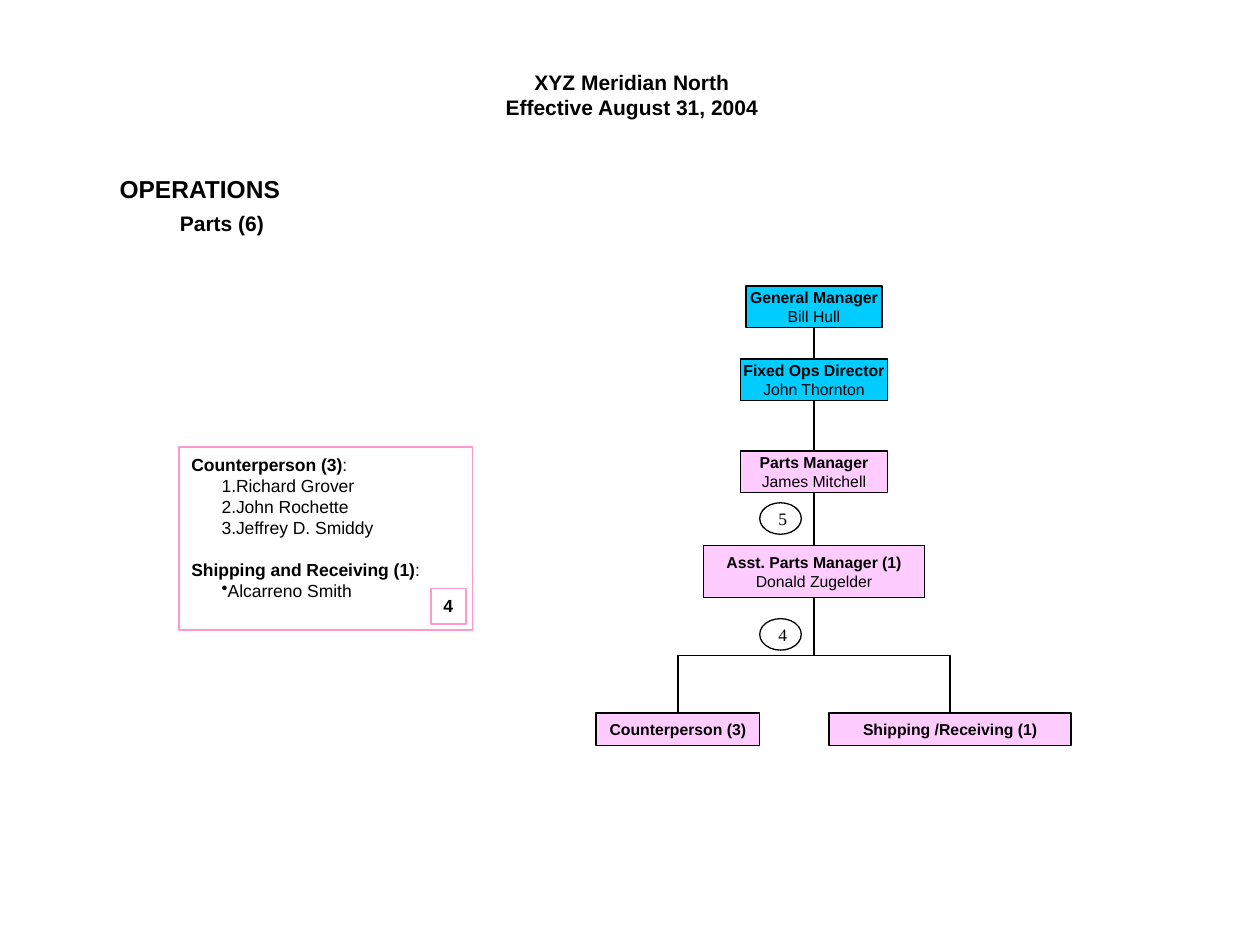
from lxml import etree
from pptx import Presentation
from pptx import util as u
from pptx.dml.color import RGBColor
from pptx.enum import shapes, text
from pptx.oxml.ns import qn

BLACK, PINK, BLUE, ROSE = "000000", "FFCCFF", "00CCFF", "FF99CC"
GROW = text.MSO_AUTO_SIZE.SHAPE_TO_FIT_TEXT
MID = text.MSO_ANCHOR.MIDDLE
LEFT, CENTER = text.PP_ALIGN.LEFT, text.PP_ALIGN.CENTER
AXIS = 6.46


def tint(color, code):
    """Set a colour from a hex string."""
    color.rgb = RGBColor.from_string(code)


def style(item, **values):
    """Set attributes from format values."""
    for name, value in values.items():
        setattr(item, name, value)


def write(para, words, size, bold=False, face="Arial"):
    """Add a run of text to a paragraph."""
    run = para.add_run()
    run.text = words
    style(run.font, size=u.Pt(size), bold=bold, name=face)
    tint(run.font.color, BLACK)


def fill_text(shape, lines, size, align=LEFT, face="Arial", **frame):
    """Write (words, bold) lines into a shape, one paragraph each."""
    style(shape.text_frame, **{"word_wrap": True, **frame})
    for i, (words, bold) in enumerate(lines):
        para = shape.text_frame.paragraphs[0] if i == 0 else shape.text_frame.add_paragraph()
        para.alignment = align
        write(para, words, size, bold, face)


def add_form(slide, spot, fill=None, line=BLACK, width=0.75, kind="RECTANGLE"):
    """Add an outlined preset shape."""
    form = slide.shapes.add_shape(shapes.MSO_SHAPE[kind], *map(u.Inches, spot))
    form.shadow.inherit = False
    if fill:
        form.fill.solid()
        tint(form.fill.fore_color, fill)
    else:
        form.fill.background()
    tint(form.line.color, line)
    form.line.width = u.Pt(width)
    return form


def add_post(slide, mid, top, size, fill, title, name=None, wrap=True):
    """Add a box of the chart, centred on mid."""
    box = add_form(slide, (mid - size[0] / 2, top, *size), fill)
    lines = [(title, True)] + ([(name, False)] if name else [])
    fill_text(box, lines, 9, CENTER, word_wrap=wrap, vertical_anchor=MID)
    return box


def add_label(slide, spot, lines, size, align=LEFT, **form):
    """Add a plain text box."""
    box = slide.shapes.add_textbox(*map(u.Inches, spot))
    fill_text(box, lines, size, align, auto_size=GROW, **form)


def add_link(slide, kind, start, start_side, end, end_side):
    """Join two boxes with a thin black connector."""
    link = slide.shapes.add_connector(shapes.MSO_CONNECTOR[kind], 0, 0, 0, 0)
    link.begin_connect(start, start_side)
    link.end_connect(end, end_side)
    tint(link.line.color, BLACK)
    link.line.width = u.Pt(0.75)
    etree.SubElement(link.element.spPr, qn("a:effectLst"))
    return link


def add_elbow(slide, child, boss):
    """Join a child's top to the boss above by a vertical-first elbow."""
    link = add_link(slide, "ELBOW", child, 0, boss, 2)
    wide, high = link.width, link.height
    turn = 90 if link.element.flipH else 270
    link.element.flipV = False
    style(link, left=link.left + (wide - high) // 2, top=link.top + (high - wide) // 2,
          width=high, height=wide, rotation=turn)


def add_count(slide, top, count):
    """Add an oval with its head count."""
    add_form(slide, (6.03, top, 0.33, 0.25), kind="OVAL")
    add_label(slide, (6.08, top - 0.01, 0.33, 0.27), [(count, False)], 10, face="Times New Roman")


def add_panel(slide):
    """Add the staff list and its total."""
    panel = add_form(slide, (1.42, 3.55, 2.33, 1.45), line=ROSE, width=1)
    frame = panel.text_frame
    style(frame, word_wrap=True, vertical_anchor=text.MSO_ANCHOR.TOP)
    groups = [("Counterperson (3)", "buAutoNum", {"type": "arabicPeriod"},
               ["Richard Grover", "John Rochette", "Jeffrey D. Smiddy"]),
              ("Shipping and Receiving (1)", "buChar", {"char": "•"}, ["Alcarreno Smith"])]
    for i, (title, mark, kind, names) in enumerate(groups):
        head = frame.add_paragraph() if i else frame.paragraphs[0]
        style(head, alignment=LEFT, space_before=u.Pt(12 * i))
        write(head, title, 10, True)
        write(head, ":", 10)
        for name in names:
            para = frame.add_paragraph()
            style(para, alignment=LEFT, level=1)
            props = para._p.get_or_add_pPr()
            for key in ("marL", "indent"):
                props.set(key, str(u.Inches(0.12)))
            etree.SubElement(props, qn("a:" + mark), kind)
            write(para, name, 10)
    total = add_form(slide, (3.42, 4.67, 0.28, 0.28), line=ROSE, width=1)
    fill_text(total, [("4", True)], 10, vertical_anchor=text.MSO_ANCHOR.TOP)


def main():
    """Build the parts department chart."""
    deck = Presentation()
    style(deck, slide_width=u.Inches(10), slide_height=u.Inches(7.5))
    slide = deck.slides.add_slide(deck.slide_layouts[6])

    add_label(slide, (3.91, 0.5, 2.21, 0.5),
              [("XYZ Meridian North", True), ("Effective August 31, 2004", True)],
              12, CENTER, word_wrap=False)
    add_label(slide, (0.85, 1.33, 1.49, 0.33), [("OPERATIONS", True)], 14, word_wrap=False)
    add_label(slide, (1.33, 1.62, 0.87, 0.3), [("Parts (6)", True)], 12, word_wrap=False)

    posts = [(2.27, (1.08, 0.33), BLUE, "General Manager", "Bill Hull", False),
             (2.85, (1.17, 0.33), BLUE, "Fixed Ops Director", "John Thornton", False),
             (3.58, (1.17, 0.33), PINK, "Parts Manager", "James Mitchell", False),
             (4.33, (1.75, 0.41), PINK, "Asst. Parts Manager (1)", "Donald Zugelder")]
    chain = [add_post(slide, AXIS, *post) for post in posts]
    for boss, aide in zip(chain, chain[1:]):
        add_link(slide, "STRAIGHT", boss, 2, aide, 0)

    teams = [(5.38, 1.3, "Counterperson (3)"), (7.54, 1.92, "Shipping /Receiving (1)")]
    for mid, width, title in teams:
        team = add_post(slide, mid, 5.66, (width, 0.26), PINK, title)
        add_elbow(slide, team, chain[-1])

    for top, count in ((3.99, "5"), (4.91, "4")):
        add_count(slide, top, count)
    add_panel(slide)
    deck.save("out.pptx")


if __name__ == "__main__":
    main()
